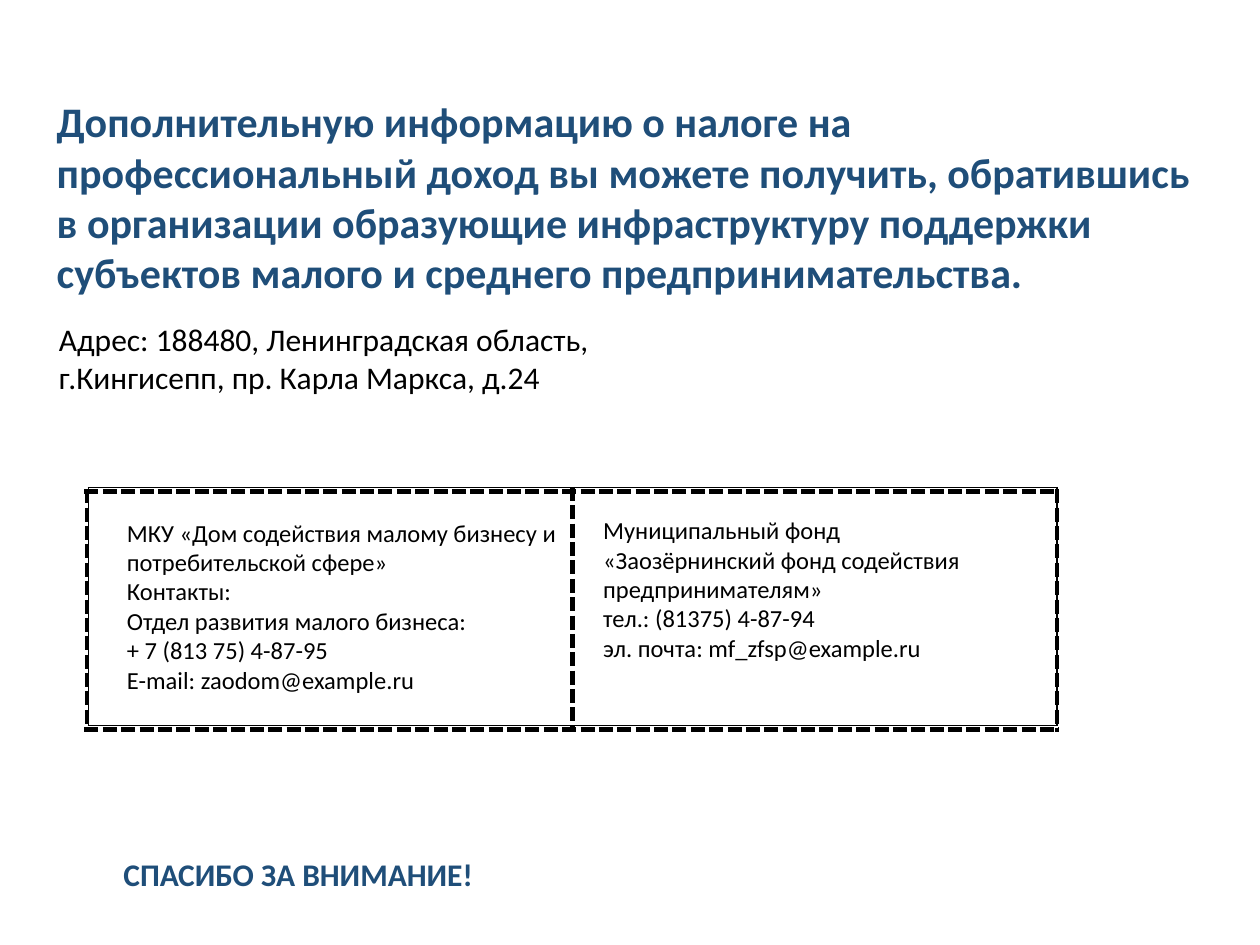
"""Builds the closing slide with contact details of the support organisations."""
from lxml import etree
from pptx import Presentation
from pptx import util as u
from pptx.dml.color import RGBColor
from pptx.enum import text
from pptx.oxml import ns

COLORS = {"heading": "1F4E79", "body": "000000", "border": "000000"}
SOLID = (1, "solid")
DASHED = (3, "sysDash")


def write(frame, content, size=14, color="body", bold=False, font="Calibri"):
    frame.word_wrap = True
    frame.auto_size = text.MSO_AUTO_SIZE.NONE
    frame.vertical_anchor = text.MSO_ANCHOR.TOP
    frame.text = content
    for paragraph in frame.paragraphs:
        paragraph.alignment = text.PP_ALIGN.LEFT
        for run in paragraph.runs:
            run.font.name = font
            run.font.size = u.Pt(size)
            run.font.bold = bold
            run.font.color.rgb = RGBColor.from_string(COLORS[color])


class ContactSlide:
    def __init__(self, deck):
        self.slide = deck.slides.add_slide(deck.slide_layouts[5])

    def title(self, content, box, **style):
        heading = self.slide.shapes.title
        heading.left, heading.top, heading.width, heading.height = map(u.Cm, box)
        write(heading.text_frame, content, **style)

    def note(self, content, box, **style):
        write(self.slide.shapes.add_textbox(*map(u.Cm, box)).text_frame, content, **style)

    def frame(self, box, cell_borders):
        """Adds a one-row table; each cell gives its left, right, top and bottom line."""
        grid = self.slide.shapes.add_table(1, len(cell_borders), *map(u.Cm, box)).table
        grid.first_row = grid.horz_banding = False
        for cell, sides in zip(grid.rows[0].cells, cell_borders):
            cell.fill.background()
            properties = cell._tc.get_or_add_tcPr()
            for index, (side, (width, dash)) in enumerate(zip("LRTB", sides)):
                line = etree.Element(ns.qn(f"a:ln{side}"), w=str(u.Pt(width)))
                fill = etree.SubElement(line, ns.qn("a:solidFill"))
                etree.SubElement(fill, ns.qn("a:srgbClr"), val=COLORS["border"])
                etree.SubElement(line, ns.qn("a:prstDash"), val=dash)
                properties.insert(index, line)


def main():
    deck = Presentation()
    deck.slide_width, deck.slide_height = u.Cm(25.4), u.Cm(19.05)
    closing = ContactSlide(deck)

    closing.note(
        "Муниципальный фонд\v«Заозёрнинский фонд содействия предпринимателям»\n"
        "тел.: (81375) 4-87-94\n"
        "эл. почта: mf_zfsp@example.ru",
        (11.91, 10.26, 11.25, 3.25))
    closing.note(
        "МКУ «Дом содействия малому бизнесу и потребительской сфере»\n"
        "Контакты:\n"
        "Отдел развития малого бизнеса:\n"
        "+ 7 (813 75) 4-87-95\n"
        "E-mail: zaodom@example.ru",
        (2.31, 10.31, 10.59, 5.05))
    closing.note(
        "Адрес: 188480, Ленинградская область, г.Кингисепп, пр. Карла Маркса, д.24",
        (0.94, 6.33, 12.7, 1.8), size=18)
    closing.title(
        "Дополнительную информацию о налоге на профессиональный доход вы можете получить, "
        "обратившись в организации образующие инфраструктуру поддержки субъектов малого "
        "и среднего предпринимательства.",
        (0.89, 1.8, 23.44, 4.37), size=24, color="heading", bold=True)
    closing.frame((1.78, 9.83, 19.53, 4.8),
                  [(SOLID, DASHED, SOLID, SOLID), (DASHED, SOLID, SOLID, SOLID)])
    closing.frame((1.75, 9.91, 19.56, 4.8), [[DASHED] * 4])
    closing.note("СПАСИБО ЗА ВНИМАНИЕ!", (2.24, 17.12, 24.41, 1.02),
                 size=18, color="heading", bold=True)

    deck.save("out.pptx")


if __name__ == "__main__":
    main()
